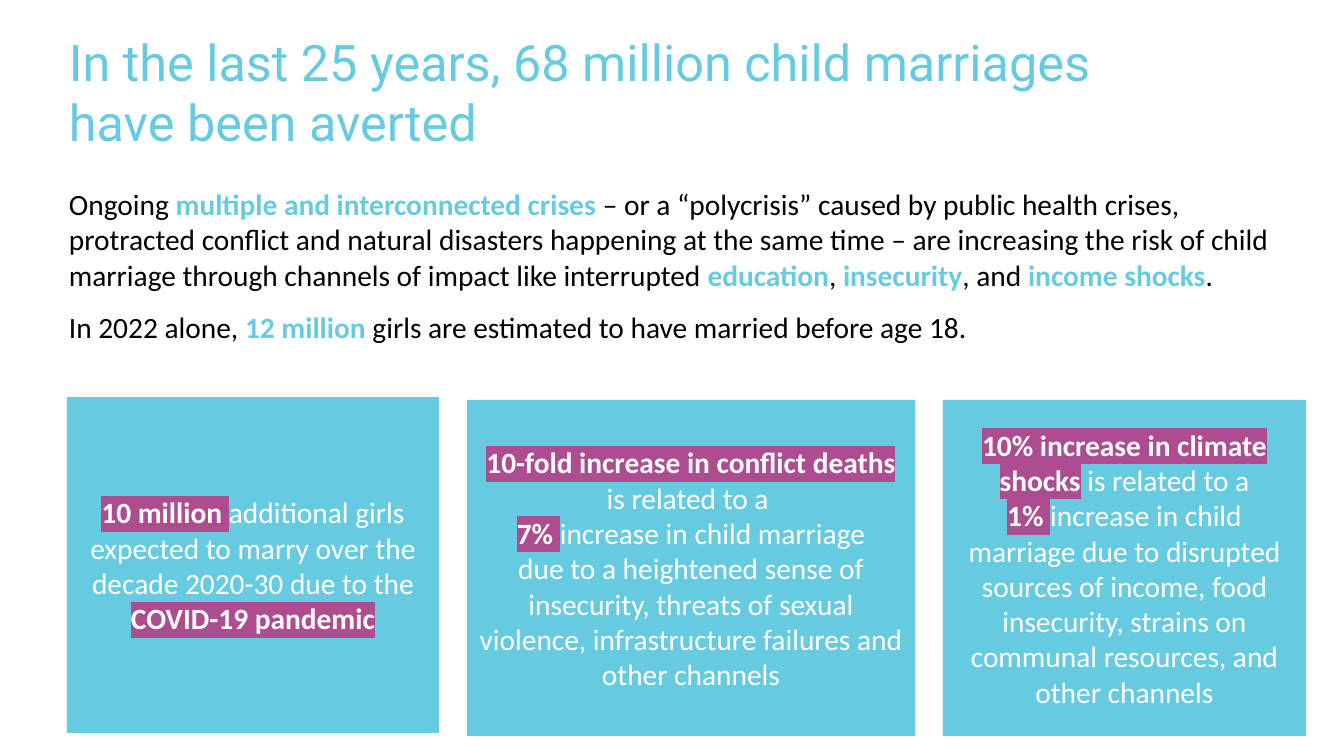
import pptx
import pptx.util
import pptx.dml.color
import pptx.enum.shapes
import pptx.enum.text
import pptx.oxml
import pptx.oxml.ns

PIXEL = 914400 / 100.8
COLORS = {"sky": "66CBE1", "plum": "AE4C90", "black": "000000", "white": "FFFFFF"}
ALIGN = pptx.enum.text.PP_ALIGN


def px(length):
    return pptx.util.Emu(round(length * PIXEL))


def write(box, lines, font, size, color, strong=None, highlight=None, align=ALIGN.LEFT):
    """Fill a box with paragraphs; text between asterisks is emphasised."""
    frame = box.text_frame
    frame.word_wrap = True
    frame.vertical_anchor = pptx.enum.text.MSO_ANCHOR.MIDDLE
    frame.text = "\n".join(lines).replace("*", "")
    for para, line in zip(frame.paragraphs, lines):
        para.text = ""
        para.alignment = align
        for index, words in enumerate(line.split("*")):
            if not words:
                continue
            emphasised = index % 2 == 1
            span = para.add_run()
            span.text = words
            span.font.name = font
            span.font.size = pptx.util.Pt(size)
            span.font.bold = emphasised
            name = strong if emphasised else color
            span.font.color.rgb = pptx.dml.color.RGBColor.from_string(COLORS[name])
            if emphasised and highlight:
                mark = pptx.oxml.parse_xml(
                    f'<a:highlight {pptx.oxml.ns.nsdecls("a")}>'
                    f'<a:srgbClr val="{COLORS[highlight]}"/></a:highlight>')
                fill = span.font._element.find(pptx.oxml.ns.qn("a:solidFill"))
                fill.addnext(mark)


deck = pptx.Presentation()
deck.slide_width, deck.slide_height = px(1344), px(756)
page = deck.slides.add_slide(deck.slide_layouts[6])

# Title
title = page.shapes.add_textbox(px(59), px(31), px(1131), px(121))
write(title, ["In the last 25 years, 68 million child marriages have been averted"],
      "Roboto", 36, "sky")

# Introduction
intro = page.shapes.add_textbox(px(59), px(171), px(1248), px(188))
write(intro, [
    "Ongoing *multiple and interconnected crises* – or a “polycrisis” caused by public "
    "health crises, protracted conflict and natural disasters happening at the same time "
    "– are increasing the risk of child marriage through channels of impact like "
    "interrupted *education*, *insecurity*, and *income shocks*.",
    "In 2022 alone, *12 million *girls are estimated to have married before age 18.",
], "Calibri", 21, "black", strong="sky")
intro.text_frame.paragraphs[0].space_after = pptx.util.Pt(12)

# Crisis cards: left, top, width, text
cards = [
    (67, 397, 372, [
        "*10 million *additional girls expected to marry over the decade 2020-30 "
        "due to the *COVID-19 pandemic*"]),
    (467, 400, 448, [
        "*10-fold increase in conflict deaths* is related to a ",
        "*7% *increase in child marriage",
        "due to a heightened sense of insecurity, threats of sexual violence, "
        "infrastructure failures and other channels"]),
    (943, 400, 363, [
        "*10% increase in climate shocks* is related to a",
        "*1% *increase in child marriage due to disrupted sources of income, food "
        "insecurity, strains on communal resources, and other channels"]),
]
for left, top, width, lines in cards:
    card = page.shapes.add_shape(pptx.enum.shapes.MSO_SHAPE.RECTANGLE,
                                 px(left), px(top), px(width), px(336))
    card.shadow.inherit = False
    card.fill.solid()
    card.fill.fore_color.rgb = pptx.dml.color.RGBColor.from_string(COLORS["sky"])
    card.line.fill.background()
    write(card, lines, "Calibri", 21, "white", strong="white", highlight="plum",
          align=ALIGN.CENTER)

deck.save("out.pptx")
